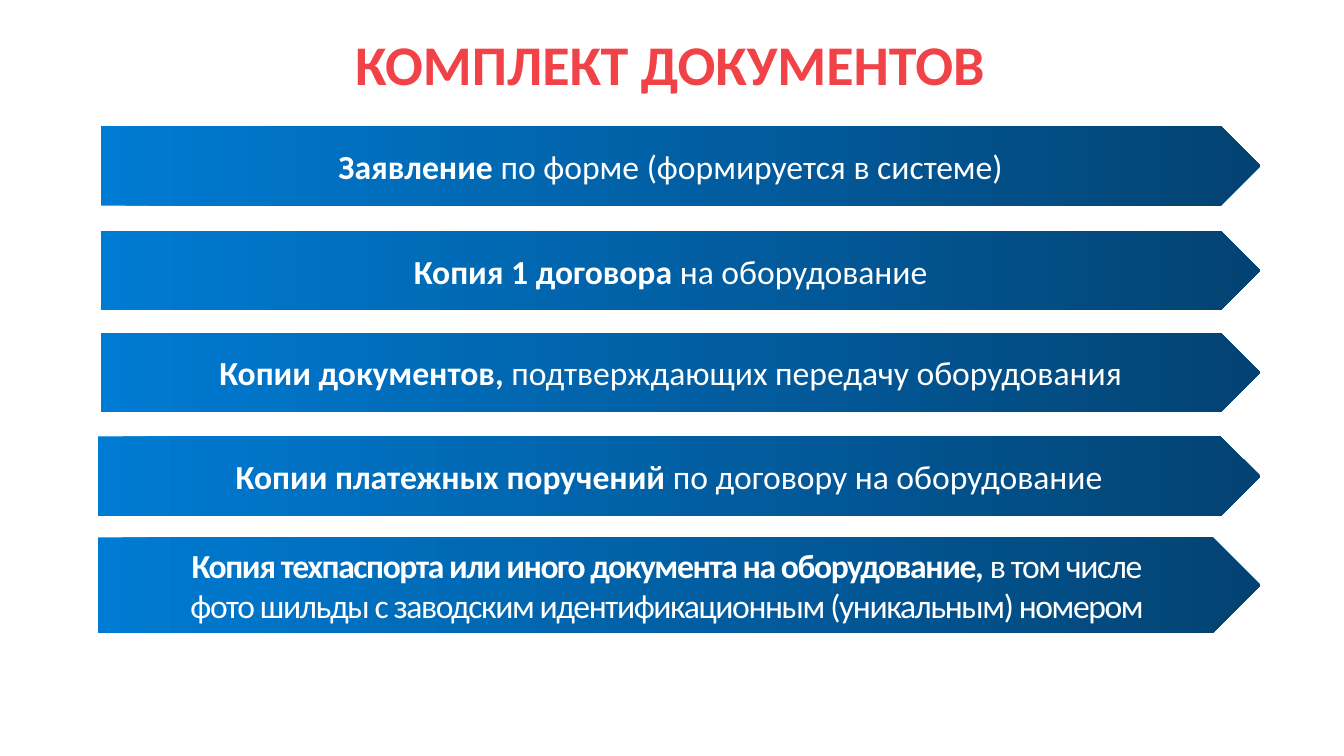
from dataclasses import dataclass

from pptx import Presentation
from pptx.dml.color import RGBColor
from pptx.enum.shapes import MSO_SHAPE
from pptx.enum.text import MSO_ANCHOR, PP_ALIGN
from pptx.slide import Slide
from pptx.text.text import TextFrame, _Paragraph
from pptx.util import Inches, Pt

COLORS = {
    "heading": "F04247",
    "banner_start": "007BD3",
    "banner_end": "034373",
    "banner_text": "FFFFFF",
}
HEADING_FONT = {"name": "Calibri", "size": Pt(40), "bold": True}
BANNER_FONT = {"name": "Calibri", "size": Pt(24)}
FRAME_FORMAT = {"word_wrap": True, "vertical_anchor": MSO_ANCHOR.MIDDLE}
BANNER_RIGHT = 12.5


@dataclass(frozen=True)
class Phrase:
    text: str
    bold: bool = False


@dataclass(frozen=True)
class Banner:
    left: float
    top: float
    lines: tuple[tuple[Phrase, ...], ...]
    height: float = 0.79
    tracking: int = 0


BANNERS = (
    Banner(1, 1.25, ((Phrase("Заявление", True),
                      Phrase(" по форме (формируется в системе)")),)),
    Banner(1, 2.29, ((Phrase("Копия 1 договора ", True),
                      Phrase("на оборудование")),)),
    Banner(1, 3.3, ((Phrase("Копии документов, ", True),
                     Phrase("подтверждающих передачу оборудования")),)),
    Banner(0.97, 4.33, ((Phrase("Копии платежных поручений", True),
                         Phrase(" по договору на оборудование")),)),
    Banner(0.97, 5.33, (
        (Phrase("Копия техпаспорта или иного документа на оборудование, ", True),
         Phrase("в том числе")),
        (Phrase("фото шильды с заводским идентификационным (уникальным) номером"),),
    ), height=0.95, tracking=-100),
)


def apply_format(target: object, values: dict) -> None:
    for attribute, value in values.items():
        setattr(target, attribute, value)


def add_phrase(paragraph: _Paragraph, phrase: Phrase, font: dict,
               color: str, tracking: int = 0) -> None:
    run = paragraph.add_run()
    run.text = phrase.text
    apply_format(run.font, {**font, "bold": phrase.bold})
    run.font.color.rgb = RGBColor.from_string(COLORS[color])
    if tracking:
        run.font._element.set("spc", str(tracking))


def add_line(frame: TextFrame, first: bool) -> _Paragraph:
    paragraph = frame.paragraphs[0] if first else frame.add_paragraph()
    paragraph.alignment = PP_ALIGN.CENTER
    return paragraph


def draw_heading(slide: Slide, text: str) -> None:
    heading = slide.shapes.add_textbox(
        Inches(-0.02), Inches(-0.06), Inches(13.33), Inches(1.43))
    apply_format(heading.text_frame, FRAME_FORMAT)
    paragraph = add_line(heading.text_frame, True)
    paragraph.line_spacing = 0.96
    add_phrase(paragraph, Phrase(text, True), HEADING_FONT, "heading")


def draw_banner(slide: Slide, banner: Banner) -> None:
    arrow = slide.shapes.add_shape(
        MSO_SHAPE.PENTAGON, Inches(banner.left), Inches(banner.top),
        Inches(BANNER_RIGHT - banner.left), Inches(banner.height))
    arrow.shadow.inherit = False
    arrow.line.fill.background()
    arrow.fill.gradient()
    arrow.fill.gradient_angle = 0
    for stop, color in zip(arrow.fill.gradient_stops, ("banner_start", "banner_end")):
        stop.color.rgb = RGBColor.from_string(COLORS[color])
    apply_format(arrow.text_frame, FRAME_FORMAT)
    for index, phrases in enumerate(banner.lines):
        paragraph = add_line(arrow.text_frame, index == 0)
        for phrase in phrases:
            add_phrase(paragraph, phrase, BANNER_FONT, "banner_text", banner.tracking)


def main() -> None:
    presentation = Presentation()
    presentation.slide_width = Inches(13.33)
    presentation.slide_height = Inches(7.5)
    slide = presentation.slides.add_slide(presentation.slide_layouts[6])
    draw_heading(slide, "КОМПЛЕКТ ДОКУМЕНТОВ")
    for banner in BANNERS:
        draw_banner(slide, banner)
    presentation.save("out.pptx")


if __name__ == "__main__":
    main()
